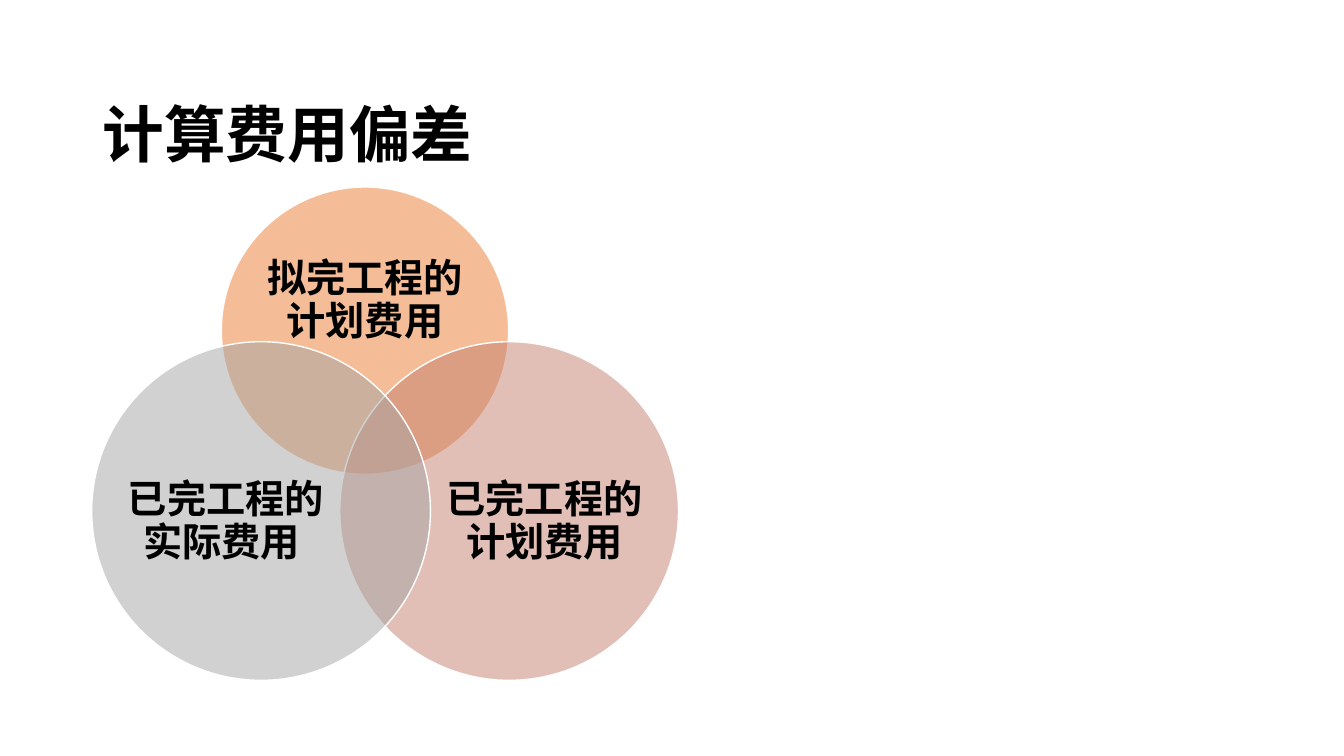
from lxml import etree
from pptx import Presentation
from pptx.dml.color import RGBColor
from pptx.enum.shapes import MSO_SHAPE
from pptx.enum.text import MSO_ANCHOR, PP_ALIGN
from pptx.oxml.ns import qn
from pptx.util import Inches, Pt

BLACK = RGBColor(0x00, 0x00, 0x00)
WHITE = RGBColor(0xFF, 0xFF, 0xFF)
ORANGE = RGBColor(0xED, 0x7D, 0x31)
ROSE = RGBColor(0xC4, 0x81, 0x70)
GREY = RGBColor(0xA5, 0xA5, 0xA5)
FONT = "Times New Roman"
SLIDE_SIZE = (13.33, 7.5)

TITLE = "计算费用偏差"
TITLE_CENTER, TITLE_SIZE = (6.67, 1.13), (11.5, 1.45)

# The two lower circles mirror each other about AXIS.
AXIS, LOWER_Y, LOWER_LABEL_Y = 3.82, 5.07, 5.18
CIRCLE_OFFSET, LABEL_OFFSET = 1.23, 1.58
LOWER_DIAMETER, LOWER_LABEL_SIZE = 3.36, (2.02, 1.85)


def lower_circle(text, color, side):
    return (text, color, (AXIS + side * CIRCLE_OFFSET, LOWER_Y), LOWER_DIAMETER,
            (AXIS + side * LABEL_OFFSET, LOWER_LABEL_Y), LOWER_LABEL_SIZE)


# text, colour, circle centre, diameter, label centre, label size
COSTS = [
    ("拟完工程的计划费用", ORANGE, (3.62, 3.28), 2.85, (3.62, 2.99), (2.09, 1.28)),
    lower_circle("已完工程的计划费用", ROSE, 1),
    lower_circle("已完工程的实际费用 ", GREY, -1),
]


def box_around(center, size):
    (x, y), (width, height) = center, size
    return [Inches(v) for v in (x - width / 2, y - height / 2, width, height)]


def add_text(slide, text, center, size, points, spacing, align, margins=None):
    frame = slide.shapes.add_textbox(*box_around(center, size)).text_frame
    frame.word_wrap = True
    frame.vertical_anchor = MSO_ANCHOR.MIDDLE
    if margins is not None:
        frame.margin_left = frame.margin_right = margins
        frame.margin_top = frame.margin_bottom = margins
    frame.text = text
    paragraph = frame.paragraphs[0]
    paragraph.alignment = align
    paragraph.line_spacing = spacing
    font = paragraph.runs[0].font
    font.name, font.size, font.bold = FONT, Pt(points), True
    font.color.rgb = BLACK


def add_circle(slide, color, center, diameter):
    """Draw a half-transparent circle with a thin white outline."""
    circle = slide.shapes.add_shape(
        MSO_SHAPE.OVAL, *box_around(center, (diameter, diameter)))
    circle.shadow.inherit = False
    circle.fill.solid()
    circle.fill.fore_color.rgb = color
    fill_color = circle.fill._xPr.find(qn("a:solidFill"))[0]
    etree.SubElement(fill_color, qn("a:alpha")).set("val", "50000")
    circle.line.color.rgb = WHITE
    circle.line.width = Pt(1)


def main():
    deck = Presentation()
    deck.slide_width, deck.slide_height = (Inches(v) for v in SLIDE_SIZE)
    slide = deck.slides.add_slide(deck.slide_layouts[6])
    add_text(slide, TITLE, TITLE_CENTER, TITLE_SIZE, 44, 1.5, PP_ALIGN.LEFT)
    for text, color, center, diameter, label_center, label_size in COSTS:
        add_circle(slide, color, center, diameter)
        add_text(slide, text, label_center, label_size, 28, 0.9,
                 PP_ALIGN.CENTER, margins=0)
    deck.save("out.pptx")


if __name__ == "__main__":
    main()
